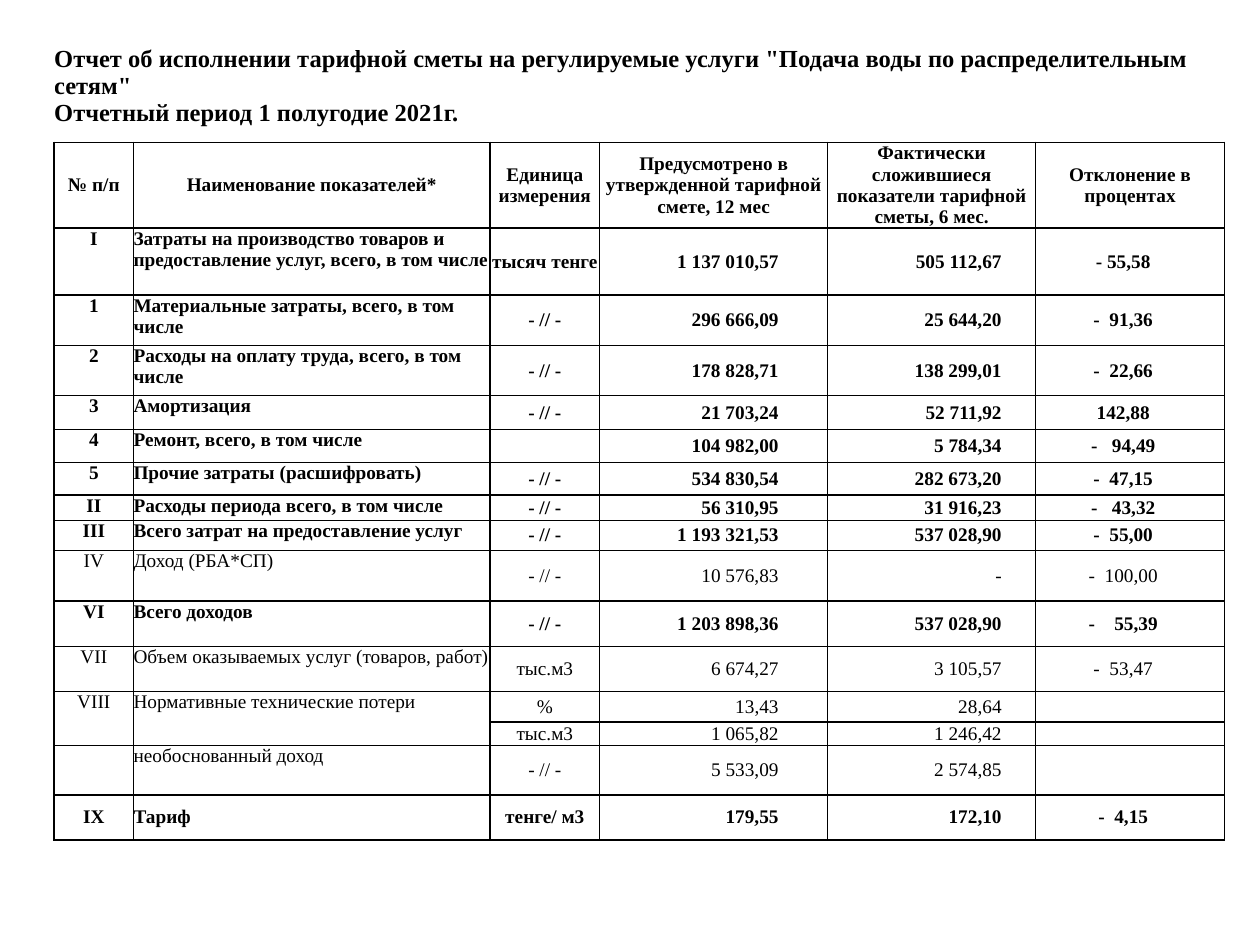
from lxml import etree
from pptx import Presentation
from pptx.dml.color import RGBColor
from pptx.enum.text import MSO_ANCHOR, PP_ALIGN
from pptx.oxml.ns import qn
from pptx.util import Inches, Pt

LEFT, CENTER, RIGHT = PP_ALIGN.LEFT, PP_ALIGN.CENTER, PP_ALIGN.RIGHT
TOP, MIDDLE = MSO_ANCHOR.TOP, MSO_ANCHOR.MIDDLE
COLORS = {"paper": "FFFFFF", "ink": "000000"}
FONT = "Times New Roman"
SIDES = ("lnL", "lnR", "lnT", "lnB")
DITTO = "- // -"

COLUMN_WIDTHS = [0.63, 2.83, 0.87, 1.81, 1.65, 1.5]
COLUMN_ALIGNS = [CENTER, LEFT, CENTER, RIGHT, RIGHT, CENTER]
COLUMN_RIGHT_MARGINS = [0, 0, 0, 0.39, 0.27, 0.11]
TITLE_HEIGHTS = [0.43, 0.34]
HEADER_HEIGHT = 0.68

TITLE = 'Отчет об исполнении тарифной сметы на регулируемые услуги "Подача воды по распределительным сетям"'
PERIOD = "Отчетный период 1 полугодие 2021г."
HEADERS = [
    "№ п/п", "Наименование показателей*", "Единица измерения",
    "Предусмотрено в утвержденной тарифной смете, 12 мес",
    "Фактически сложившиеся показатели тарифной сметы, 6 мес.",
    "Отклонение в процентах",
]
# Row height, bold, then the six cell texts
INDICATORS = [
    (0.53, True, "I", "Затраты на производство товаров и предоставление услуг, всего, в том числе",
     "тысяч тенге", "1 137 010,57", "505 112,67", "- 55,58"),
    (0.4, True, "1", "Материальные затраты, всего, в том числе", DITTO, "296 666,09", "25 644,20", "-  91,36"),
    (0.4, True, "2", "Расходы на оплату труда, всего, в том числе", DITTO, "178 828,71", "138 299,01", "-  22,66"),
    (0.27, True, "3", "Амортизация", DITTO, "21 703,24", "52 711,92", "142,88"),
    (0.26, True, "4", "Ремонт, всего, в том числе", "", "104 982,00", "5 784,34", "-   94,49"),
    (0.26, True, "5", "Прочие затраты (расшифровать)", DITTO, "534 830,54", "282 673,20", "-  47,15"),
    (0.2, True, "II", "Расходы периода всего, в том числе", DITTO, "56 310,95", "31 916,23", "-   43,32"),
    (0.24, True, "III", "Всего затрат на предоставление услуг", DITTO, "1 193 321,53", "537 028,90", "-  55,00"),
    (0.4, False, "IV", "Доход (РБА*СП)", DITTO, "10 576,83", "-", "-  100,00"),
    (0.36, True, "VI", "Всего доходов", DITTO, "1 203 898,36", "537 028,90", "-    55,39"),
    (0.36, False, "VII", "Объем оказываемых услуг (товаров, работ)", "тыс.м3", "6 674,27", "3 105,57", "-  53,47"),
    (0.24, False, "VIII", "Нормативные технические потери", "%", "13,43", "28,64", ""),
    (0.18, False, "", "", "тыс.м3", "1 065,82", "1 246,42", ""),
    (0.39, False, "", "необоснованный доход", DITTO, "5 533,09", "2 574,85", ""),
    (0.36, True, "IX", "Тариф", "тенге/ м3", "179,55", "172,10", "-  4,15"),
]


def add_borders(cell, colors):
    """Draw 1 pt lines in the order left, right, top, bottom."""
    properties = cell._tc.get_or_add_tcPr()
    for side, color in zip(SIDES, colors):
        line = etree.SubElement(properties, qn(f"a:{side}"), w=str(Pt(1)))
        fill = etree.SubElement(line, qn("a:solidFill"))
        etree.SubElement(fill, qn("a:srgbClr"), val=COLORS[color])


def style_cell(cell, text="", size=11, bold=True, align=LEFT, anchor=MIDDLE,
               right_margin=0, borders=("ink",) * 4):
    add_borders(cell, borders)
    cell.fill.solid()
    cell.fill.fore_color.rgb = RGBColor.from_string(COLORS["paper"])
    cell.margin_left = cell.margin_top = cell.margin_bottom = 0
    cell.margin_right = Inches(right_margin)
    cell.vertical_anchor = anchor
    paragraph = cell.text_frame.paragraphs[0]
    paragraph.text = text
    paragraph.alignment = align
    # Keeps empty cells from stretching short rows
    paragraph._p.get_or_add_endParaRPr().set("sz", str(size * 100))
    for run in paragraph.runs:
        run.font.name = FONT
        run.font.size = Pt(size)
        run.font.bold = bold
        run.font.color.rgb = RGBColor.from_string(COLORS["ink"])


def add_report_table(slide):
    heights = TITLE_HEIGHTS + [HEADER_HEIGHT] + [row[0] for row in INDICATORS]
    frame = slide.shapes.add_table(
        len(heights), len(COLUMN_WIDTHS), Inches(0.43), Inches(0.36),
        Inches(sum(COLUMN_WIDTHS)), Inches(sum(heights)))
    table = frame.table
    table.first_row = table.horz_banding = False
    for column, width in zip(table.columns, COLUMN_WIDTHS):
        column.width = Inches(width)
    for row, height in zip(table.rows, heights):
        row.height = Inches(height)
    return table


def fill_titles(table):
    last = len(COLUMN_WIDTHS) - 1
    for column in range(last + 1):
        style_cell(table.cell(0, column), TITLE if column == 0 else "",
                   size=14, borders=("paper",) * 4)
        style_cell(table.cell(1, column), PERIOD if column == 0 else "",
                   size=14, anchor=TOP, borders=("paper",) * 3 + ("ink",))
    table.cell(0, 0).merge(table.cell(0, last))
    table.cell(1, 0).merge(table.cell(1, 3))


def fill_indicators(table):
    first = len(TITLE_HEIGHTS) + 1
    for row, (_, bold, *texts) in enumerate(INDICATORS, first):
        for column, text in enumerate(texts):
            at_top = column < 2 and texts[0] != "IX"
            style_cell(table.cell(row, column), text, bold=bold,
                       align=COLUMN_ALIGNS[column],
                       anchor=TOP if at_top else MIDDLE,
                       right_margin=COLUMN_RIGHT_MARGINS[column])
    losses = first + [row[2] for row in INDICATORS].index("VIII")
    for column in range(2):
        table.cell(losses, column).merge(table.cell(losses + 1, column))


def main():
    deck = Presentation()
    deck.slide_width, deck.slide_height = Inches(10), Inches(7.5)
    slide = deck.slides.add_slide(deck.slide_layouts[6])
    table = add_report_table(slide)
    fill_titles(table)
    for column, header in enumerate(HEADERS):
        style_cell(table.cell(len(TITLE_HEIGHTS), column), header, align=CENTER)
    fill_indicators(table)
    deck.save("out.pptx")


if __name__ == "__main__":
    main()
